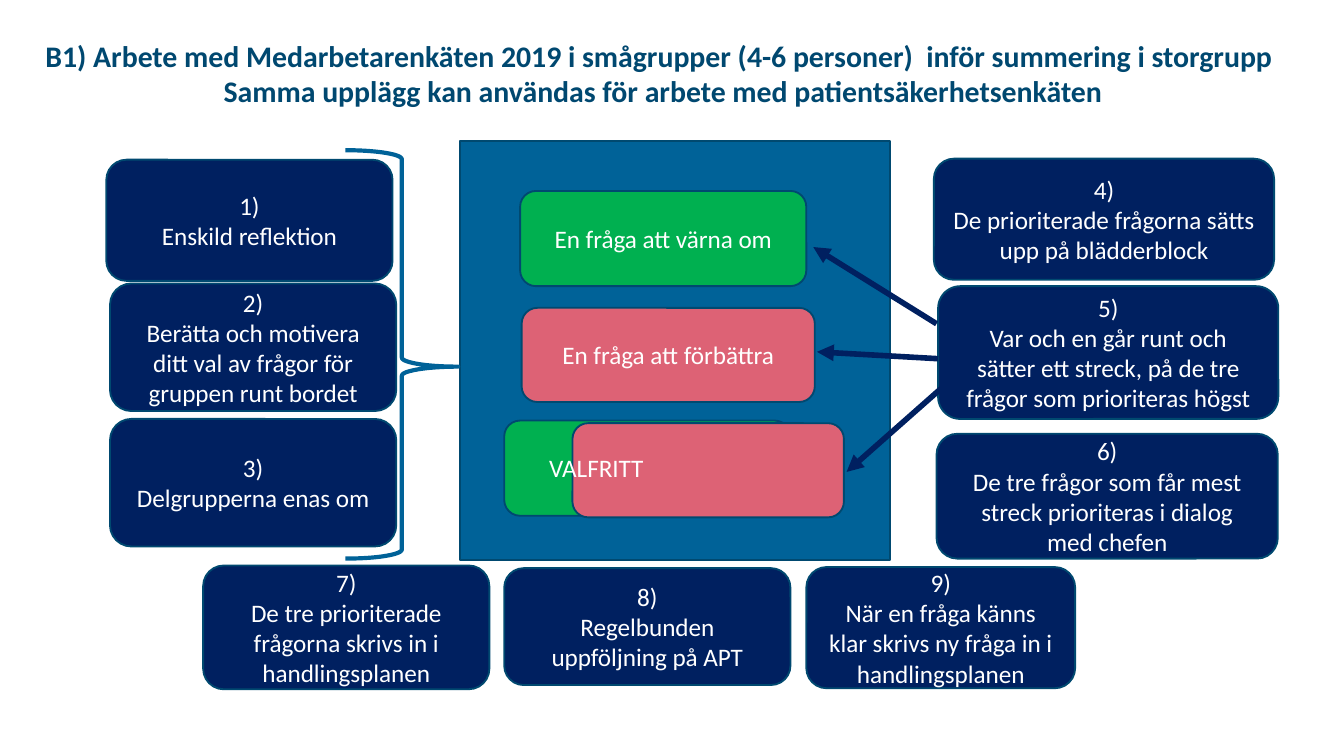
import pptx
import pptx.util
import pptx.dml.color
import pptx.enum.shapes
import pptx.enum.text
import pptx.oxml
import pptx.oxml.ns
from dataclasses import dataclass

Cm, Pt = pptx.util.Cm, pptx.util.Pt
KIND = pptx.enum.shapes.MSO_SHAPE
ALIGN = pptx.enum.text.PP_ALIGN
HUES = {"navy": "002060", "blue": "006298", "edge": "004970", "title": "004870",
        "green": "00B050", "pink": "DD6275", "white": "FFFFFF"}


@dataclass
class Box:
    """Rounded box; lengths in centimetres."""
    left: float
    top: float
    wide: float
    high: float
    text: str = ""
    fill: str = "navy"


@dataclass
class Arrow:
    """Line with its head at the end point; lengths in centimetres."""
    x1: float
    y1: float
    x2: float
    y2: float


STEPS = [
    Box(2.01, 3.02, 5.41, 2.29, "1)\nEnskild reflektion"),
    Box(2.08, 5.36, 5.41, 2.41,
        "2)\nBerätta och motivera ditt val av frågor för gruppen runt bordet"),
    Box(2.08, 7.92, 5.41, 2.41, "3)\nDelgrupperna enas om"),
    Box(17.65, 3, 6.43, 2.29, "4)\nDe prioriterade frågorna sätts upp på blädderblock"),
    Box(17.73, 5.41, 6.43, 2.51,
        "5)\nVar och en går runt och sätter ett streck, på de tre frågor som prioriteras högst"),
    Box(17.7, 8.2, 6.45, 2.36,
        "6)\nDe tre frågor som får mest streck prioriteras i dialog med chefen"),
    Box(3.84, 10.69, 5.41, 2.34,
        "7)\nDe tre prioriterade frågorna skrivs in i handlingsplanen"),
    Box(9.53, 10.74, 5.41, 2.21, "8)\nRegelbunden uppföljning på APT"),
    Box(15.24, 10.72, 5.08, 2.29,
        "9)\nNär en fråga känns klar skrivs ny fråga in i handlingsplanen"),
]
CARDS = [
    Box(9.83, 3.61, 5.41, 1.8, "En fråga att värna om", "green"),
    Box(9.86, 5.82, 5.54, 1.78, "En fråga att förbättra", "pink"),
    Box(9.53, 7.95, 5.41, 1.8, fill="green"),
    Box(10.82, 8, 5.13, 1.78, fill="pink"),
]
ARROWS = [
    Arrow(17.7, 6.12, 15.37, 4.67),
    Arrow(17.73, 6.78, 15.44, 6.65),
    Arrow(17.88, 7.26, 16, 8.92),
]


def hue(name: str) -> pptx.dml.color.RGBColor:
    return pptx.dml.color.RGBColor.from_string(HUES[name])


def place(box: Box) -> tuple:
    return Cm(box.left), Cm(box.top), Cm(box.wide), Cm(box.high)


def write(shape, text: str, size: float = 13.5, tint: str = "white",
          bold: bool = False, align=ALIGN.CENTER) -> None:
    frame = shape.text_frame
    frame.text = text
    frame.word_wrap = True
    for line in frame.paragraphs:
        line.alignment = align
        for run in line.runs:
            run.font.name = "Calibri"
            run.font.size = Pt(size)
            run.font.bold = bold
            run.font.color.rgb = hue(tint)


def draw_box(slide, box: Box, kind=KIND.ROUNDED_RECTANGLE) -> None:
    shape = slide.shapes.add_shape(kind, *place(box))
    shape.shadow.inherit = False
    shape.fill.solid()
    shape.fill.fore_color.rgb = hue(box.fill)
    shape.line.color.rgb = hue("edge")
    shape.line.width = Pt(1)
    if box.text:
        shape.text_frame.vertical_anchor = pptx.enum.text.MSO_ANCHOR.MIDDLE
        write(shape, box.text)


def draw_brace(slide, box: Box) -> None:
    brace = slide.shapes.add_shape(KIND.RIGHT_BRACE, *place(box))
    brace.adjustments[0] = 0.08
    brace.adjustments[1] = 0.53
    brace.shadow.inherit = False
    brace.fill.background()
    brace.line.color.rgb = hue("blue")
    brace.line.width = Pt(2.25)


def draw_arrow(slide, arrow: Arrow) -> None:
    line = slide.shapes.add_connector(
        pptx.enum.shapes.MSO_CONNECTOR.STRAIGHT,
        Cm(arrow.x1), Cm(arrow.y1), Cm(arrow.x2), Cm(arrow.y2))
    line.line.color.rgb = hue("navy")
    line.line.width = Pt(3)
    space = pptx.oxml.ns.nsdecls("a")
    props = line._element.spPr
    props.find(pptx.oxml.ns.qn("a:ln")).append(
        pptx.oxml.parse_xml(f'<a:tailEnd {space} type="triangle"/>'))
    props.append(pptx.oxml.parse_xml(f"<a:effectLst {space}/>"))


def main() -> None:
    deck = pptx.Presentation()
    deck.slide_width, deck.slide_height = Cm(25.4), Cm(14.29)
    slide = deck.slides.add_slide(deck.slide_layouts[6])

    # Numbered steps
    for step in STEPS:
        draw_box(slide, step)

    # Title
    title = slide.shapes.add_textbox(Cm(0.61), Cm(0.58), Cm(23.85), Cm(2.31))
    write(title, "B1) Arbete med Medarbetarenkäten 2019 i smågrupper (4-6 personer)  "
          "inför summering i storgrupp\n"
          "Samma upplägg kan användas för arbete med patientsäkerhetsenkäten",
          16, "title", True)
    title.text_frame.paragraphs[0].alignment = ALIGN.LEFT

    # Panel with the three questions
    draw_box(slide, Box(8.69, 2.67, 8.13, 7.92, fill="blue"), KIND.RECTANGLE)
    for card in CARDS:
        draw_box(slide, card)
    label = slide.shapes.add_textbox(Cm(10.13), Cm(8.43), Cm(2.49), Cm(0.84))
    write(label, "VALFRITT", align=ALIGN.LEFT)

    # Brace and arrows that lead to the panel
    draw_brace(slide, Box(6.53, 2.84, 2.13, 7.72))
    for arrow in ARROWS:
        draw_arrow(slide, arrow)

    deck.save("out.pptx")


if __name__ == "__main__":
    main()
